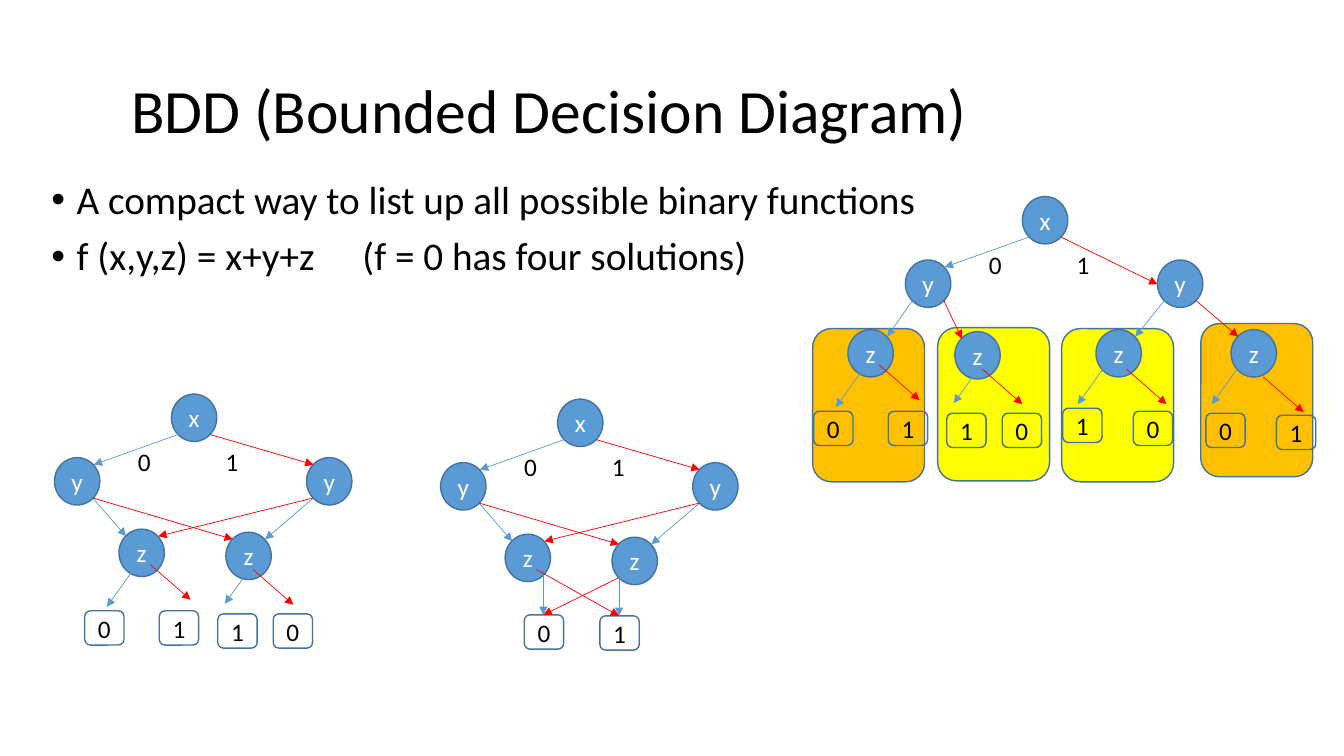
from pptx import Presentation
from pptx.dml.color import RGBColor
from pptx.enum.shapes import MSO_CONNECTOR as Link, MSO_SHAPE as Kind
from pptx.enum.text import MSO_ANCHOR as Anchor, MSO_AUTO_SIZE as Fit, PP_ALIGN as Align
from pptx.oxml.ns import qn
from pptx.util import Inches, Pt
from lxml.etree import SubElement

# Content
TITLE = "BDD (Bounded Decision Diagram)"
POINTS = [
    "A compact way to list up all possible binary functions",
    "f (x,y,z) = x+y+z 　(f = 0 has four solutions)",
]
# Panels behind the full tree: left, top, colour name
PANELS = [(9.3, 3.25, "odd"), (10.53, 3.26, "odd"),
          (8.06, 3.26, "even"), (11.91, 3.21, "even")]

# Top of every tree, as offsets from its x node
TOP = {"x": (0, 0), "y1": (-1.16, .63), "y2": (1.34, .63)}
SIGNS = [("0", -.43, .47), ("1", .44, .47)]
PAIR = {"z1": (-.52, 1.34), "z2": (.54, 1.37)}
CROSS = [("y1", "se", "z1", "nw", "zero"), ("y1", "se", "z2", "nw", "one"),
         ("y2", "sw", "z2", "ne", "zero"), ("y2", "sw", "z1", "ne", "one")]

# Each fan: z node, starts of its 0 and 1 arrows, its two leaves
FAN1 = ("z1", (.13, .42), (.31, .35), ("0", -.34, .81), ("1", .4, .81))
FAN2 = ("z2", (.24, .36), (.27, .37), ("1", -.08, .81), ("0", .47, .81))
TREES = [
    {   # Full tree
        "at": (10.14, 1.95), "enter": "w",
        "nodes": {"z1": (-1.73, 1.32), "z2": (-.67, 1.34),
                  "z3": (.73, 1.32), "z4": (2.07, 1.32)},
        "edges": [("y1", "sw", "z1", "ne", "zero"), ("y1", "se", "z2", "nw", "one"),
                  ("y2", "sw", "z3", "ne", "zero"), ("y2", "se", "z4", "nw", "one")],
        "fans": [FAN1, FAN2,
                 ("z3", (.07, .39), (.3, .39), ("1", -.33, .78), ("0", .37, .81)),
                 ("z4", (.06, .39), (.32, .47), ("0", -.25, .83), ("1", .45, .85))],
        "leaves": {},
    },
    {   # Equal z nodes merged
        "at": (1.7, 3.91), "enter": "nw", "nodes": PAIR, "edges": CROSS,
        "fans": [FAN1, FAN2], "leaves": {},
    },
    {   # Equal leaves merged as well
        "at": (5.53, 3.96), "enter": "nw", "nodes": PAIR,
        "edges": CROSS + [("z1", "se", "0", "top", "zero"), ("z2", "sw", "1", "top", "zero"),
                          ("z1", "mid", "1", "top", "one"), ("z2", "sw", "0", "top", "one")],
        "fans": [], "leaves": {"0": (-.33, 2.14), "1": (.42, 2.15)},
    },
]

# Sizes in inches
PAGE = (13.33, 7.5)
NODE, LEAF, PANEL, SIGN = (.45, .47), (.39, .34), (1.11, 1.52), (.28, .4)
FALL = {"zero": (-.25, .35), "one": (.4, .35)}
PORTS = {"nw": (.07, .07), "ne": (.39, .07), "sw": (.07, .4), "se": (.38, .4),
         "w": (0, .24), "mid": (.31, .35), "top": (.19, 0)}


class Theme:
    font = "Calibri"
    title, body, small = 44, 28, 18
    hues = {"ink": "000000", "pale": "FFFFFF", "node": "5B9BD5", "rim": "43739E",
            "zero": "5B9BD5", "one": "FF0000", "odd": "FFFF00", "even": "FFC000"}

    @classmethod
    def hue(cls, name):
        return RGBColor.from_string(cls.hues[name])


deck = Presentation()
deck.slide_width, deck.slide_height = map(Inches, PAGE)
slide = deck.slides.add_slide(deck.slide_layouts[1])
parts = slide.shapes


def add(a, b):
    return a[0] + b[0], a[1] + b[1]


def place(part, at, size):
    part.left, part.top = map(Inches, at)
    part.width, part.height = map(Inches, size)


def style(para, size, hue="ink", align=Align.LEFT):
    para.font.name, para.font.size = Theme.font, Pt(size)
    para.font.color.rgb = Theme.hue(hue)
    para.alignment = align


def block(kind, at, size, fill=None, text="", hue="ink"):
    part = parts.add_shape(kind, *map(Inches, at + size))
    part.shadow.inherit = False
    if fill:
        part.fill.solid()
        part.fill.fore_color.rgb = Theme.hue(fill)
    else:
        part.fill.background()
    part.line.color.rgb, part.line.width = Theme.hue("rim"), Pt(1)
    if text:
        frame = part.text_frame
        frame.text, frame.vertical_anchor = text, Anchor.MIDDLE
        style(frame.paragraphs[0], Theme.small, hue, Align.CENTER)


def leaf(at, text):
    block(Kind.ROUNDED_RECTANGLE, at, LEAF, text=text)


def arrow(start, end, hue):
    line = parts.add_connector(Link.STRAIGHT, *map(Inches, start + end))
    line.line.color.rgb, line.line.width = Theme.hue(hue), Pt(.5)
    SubElement(line.line._get_or_add_ln(), qn("a:tailEnd"), type="triangle")
    SubElement(line._element.spPr, qn("a:effectLst"))


def sign(at, text):
    box = parts.add_textbox(*map(Inches, at + SIGN))
    box.text_frame.word_wrap = True
    box.text_frame.text = text
    style(box.text_frame.paragraphs[0], Theme.small)


def draw(tree):
    base = tree["at"]
    spots = {name: add(base, off) for name, off in {**TOP, **tree["nodes"]}.items()}
    for name, at in spots.items():
        block(Kind.OVAL, at, NODE, "node", name[0], "pale")
    for text, off in tree["leaves"].items():
        spots[text] = add(base, off)
        leaf(spots[text], text)
    head = [("x", "sw", "y1", "ne", "zero"), ("x", "se", "y2", tree["enter"], "one")]
    for start, out, end, into, hue in head + tree["edges"]:
        arrow(add(spots[start], PORTS[out]), add(spots[end], PORTS[into]), hue)
    for name, low, high, *ends in tree["fans"]:
        for hue, off in (("zero", low), ("one", high)):
            start = add(spots[name], off)
            arrow(start, add(start, FALL[hue]), hue)
        for text, *off in ends:
            leaf(add(spots[name], off), text)
    for text, *off in SIGNS:
        sign(add(base, off), text)


# Title
title = parts.title
place(title, (.92, .4), (11.5, 1.45))
frame = title.text_frame
frame.text, frame.vertical_anchor, frame.auto_size = TITLE, Anchor.MIDDLE, Fit.NONE
frame.margin_left = Inches(.38)
style(frame.paragraphs[0], Theme.title)
frame.paragraphs[0].line_spacing = .9

# Bullets
body = slide.placeholders[1]
place(body, (.41, 1.74), (11.5, 4.76))
frame = body.text_frame
frame.text, frame.auto_size = "\n".join(POINTS), Fit.NONE
for para in frame.paragraphs:
    style(para, Theme.body)
    para.line_spacing, para.space_before = .9, Pt(10)
    props = para._p.get_or_add_pPr()
    props.set("marL", str(Inches(.25)))
    props.set("indent", str(-Inches(.25)))
    SubElement(props, qn("a:buFont"), typeface="Arial")
    SubElement(props, qn("a:buChar"), char="•")
    # Bullet tags belong ahead of the default run style
    for tag in props.findall(qn("a:defRPr")):
        props.append(tag)

# Panels and trees
for left, top, fill in PANELS:
    block(Kind.ROUNDED_RECTANGLE, (left, top), PANEL, fill)
for tree in TREES:
    draw(tree)

deck.save("out.pptx")
